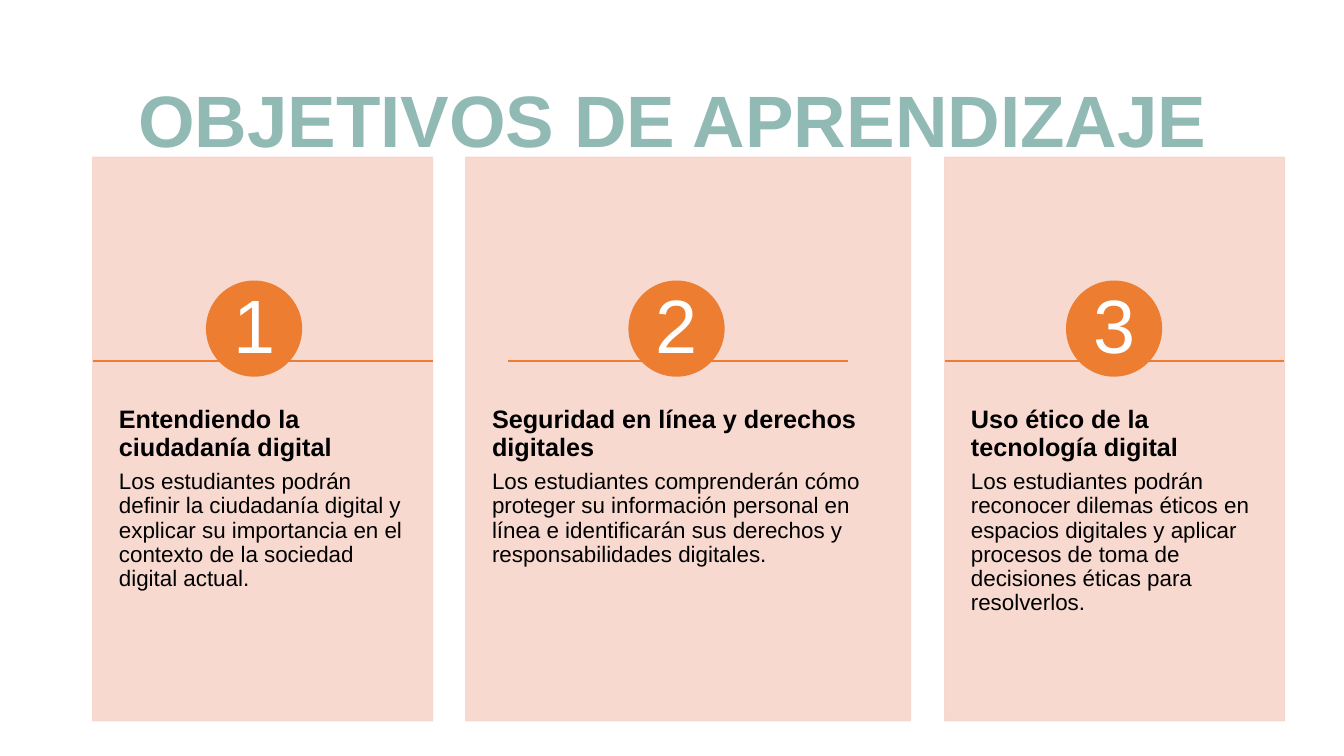
"""Build the slide of three learning objectives on digital citizenship."""
import pptx
import pptx.dml.color
import pptx.enum.shapes
import pptx.enum.text
import pptx.oxml.ns
import pptx.util
from lxml import etree

Inches, Pt = pptx.util.Inches, pptx.util.Pt
MSO_SHAPE = pptx.enum.shapes.MSO_SHAPE
ANCHOR, ALIGN = pptx.enum.text.MSO_ANCHOR, pptx.enum.text.PP_ALIGN
qn = pptx.oxml.ns.qn

COLORS = {"title": "92BAB5", "card": "F7D5CB", "accent": "ED7D31", "text": "000000", "number": "FFFFFF"}
CARD_TOP, CARD_H = 1.56, 5.59
TEXT_TOP, TEXT_H = 3.68, 3.35
CIRCLE_TOP, CIRCLE_D = 2.79, 0.94
RULE_Y, RULE_W = 3.58, 3.37

OBJECTIVES = [
    (0.92, 3.37, 2.05, 0.92, "Entendiendo la ciudadanía digital",
     "Los estudiantes podrán definir la ciudadanía digital y explicar su importancia "
     "en el contexto de la sociedad digital actual."),
    (4.62, 4.41, 6.24, 5.04, "Seguridad en línea y derechos digitales",
     "Los estudiantes comprenderán cómo proteger su información personal en línea "
     "e identificarán sus derechos y responsabilidades digitales."),
    (9.37, 3.37, 10.58, 9.37, "Uso ético de la tecnología digital",
     "Los estudiantes podrán reconocer dilemas éticos en espacios digitales y aplicar "
     "procesos de toma de decisiones éticas para resolverlos."),
]


def add_text(p, text, size, color, bold=False, align=ALIGN.LEFT):
    p.alignment = align
    p.line_spacing = 0.9
    r = p.add_run()
    r.text = text
    r.font.name = "Arial"
    r.font.size = Pt(size)
    r.font.bold = bold
    r.font.color.rgb = pptx.dml.color.RGBColor.from_string(COLORS[color])


def add_filled(kind, left, top, width, height, color):
    sp = s.shapes.add_shape(kind, Inches(left), Inches(top), Inches(width), Inches(height))
    sp.shadow.inherit = False
    rgb = pptx.dml.color.RGBColor.from_string(COLORS[color])
    sp.fill.solid()
    sp.fill.fore_color.rgb = rgb
    sp.line.color.rgb = rgb
    sp.line.width = Pt(1)
    return sp


prs = pptx.Presentation()
prs.slide_width, prs.slide_height = Inches(13.33), Inches(7.5)
s = prs.slides.add_slide(prs.slide_layouts[6])

title = s.shapes.add_textbox(Inches(0.92), Inches(0.61), Inches(11.5), Inches(1.24))
tf = title.text_frame
tf.word_wrap = True
tf.vertical_anchor = ANCHOR.MIDDLE
add_text(tf.paragraphs[0], "OBJETIVOS DE APRENDIZAJE", 52, "title", True, ALIGN.CENTER)

for number, (left, width, circle_left, rule_left, heading, body) in enumerate(OBJECTIVES, 1):
    card = add_filled(MSO_SHAPE.RECTANGLE, left, CARD_TOP, width, CARD_H, "card")
    for clr in card._element.spPr.iter(qn("a:srgbClr")):
        etree.SubElement(clr, qn("a:alpha"), val="90000")

    box = s.shapes.add_textbox(Inches(left), Inches(TEXT_TOP), Inches(width), Inches(TEXT_H))
    tf = box.text_frame
    tf.word_wrap = True
    tf.margin_left = tf.margin_right = Inches(0.26)
    tf.margin_top = tf.margin_bottom = Inches(0.36)
    add_text(tf.paragraphs[0], heading, 18, "text", True)
    p = tf.add_paragraph()
    p.space_before = Pt(6.3)
    add_text(p, body, 16, "text")

    circle = add_filled(MSO_SHAPE.OVAL, circle_left, CIRCLE_TOP, CIRCLE_D, CIRCLE_D, "accent")
    tf = circle.text_frame
    tf.margin_left = tf.margin_right = tf.margin_top = tf.margin_bottom = 0
    tf.vertical_anchor = ANCHOR.MIDDLE
    add_text(tf.paragraphs[0], str(number), 54, "number", align=ALIGN.CENTER)

    rule = s.shapes.add_connector(pptx.enum.shapes.MSO_CONNECTOR.STRAIGHT, Inches(rule_left),
                                  Inches(RULE_Y), Inches(rule_left + RULE_W), Inches(RULE_Y))
    rule.line.color.rgb = pptx.dml.color.RGBColor.from_string(COLORS["accent"])
    rule.line.width = Pt(1)
    etree.SubElement(rule._element.spPr, qn("a:effectLst"))

prs.save("out.pptx")
